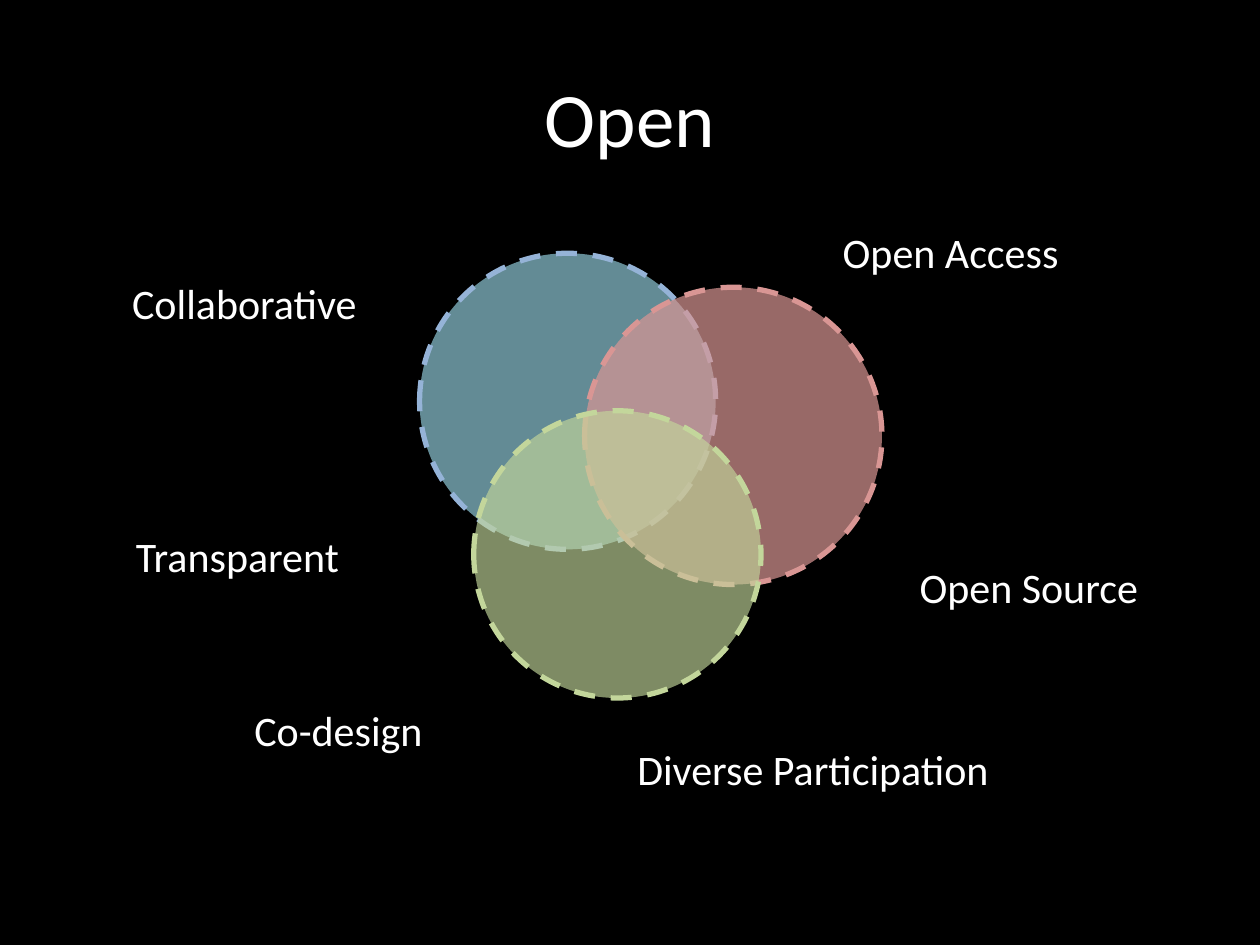
"""Build the "Open" slide: three overlapping circles ringed by six labels."""
from lxml import etree
from pptx import Presentation
from pptx.dml.color import RGBColor
from pptx.enum import dml, shapes, text
from pptx.oxml import ns
from pptx.util import Inches, Pt


def rgb(code):
    return RGBColor.from_string(code)


def write(paragraph, words, size):
    run = paragraph.add_run()
    run.text = words
    run.font.name = "Calibri"
    run.font.size = Pt(size)
    run.font.color.rgb = rgb("FFFFFF")


deck = Presentation()
deck.slide_width, deck.slide_height = Inches(10), Inches(7.5)
slide = deck.slides.add_slide(deck.slide_layouts[5])
slide.background.fill.solid()
slide.background.fill.fore_color.rgb = rgb("000000")

title = slide.shapes.title
title.left, title.top = Inches(0.5), Inches(0.3)
title.width, title.height = Inches(9), Inches(1.25)
title.text_frame.vertical_anchor = text.MSO_ANCHOR.MIDDLE
heading = title.text_frame.paragraphs[0]
heading.alignment = text.PP_ALIGN.CENTER
write(heading, "Open", 44)

circles = [
    (3.33, 2.01, 2.35, "93CDDD", "95B3D7", 68),
    (4.64, 2.28, 2.36, "D99694", "D99694", 70),
    (3.76, 3.26, 2.28, "C3D69B", "C3D69B", 65),
]
for left, top, diameter, inside, edge, opacity in circles:
    circle = slide.shapes.add_shape(
        shapes.MSO_SHAPE.OVAL,
        Inches(left), Inches(top), Inches(diameter), Inches(diameter),
    )
    circle.shadow.inherit = False
    circle.fill.solid()
    circle.fill.fore_color.rgb = rgb(inside)
    tint = circle.fill._xPr.find(ns.qn("a:solidFill"))[0]
    etree.SubElement(tint, ns.qn("a:alpha"), val=str(opacity * 1000))
    circle.line.color.rgb = rgb(edge)
    circle.line.width = Pt(3)
    circle.line.dash_style = dml.MSO_LINE.DASH

labels = [
    ("Collaborative", 0.95, 2.15, 2.01),
    ("Open Access", 6.59, 1.75, 1.93),
    ("Transparent", 0.98, 4.16, 1.87),
    ("Open Source", 7.2, 4.41, 1.96),
    ("Diverse Participation", 4.96, 5.85, 3.04),
    ("Co-design", 1.92, 5.54, 1.55),
]
for words, left, top, width in labels:
    label = slide.shapes.add_textbox(
        Inches(left), Inches(top), Inches(width), Inches(0.5)
    )
    label.text_frame.word_wrap = False
    label.text_frame.auto_size = text.MSO_AUTO_SIZE.SHAPE_TO_FIT_TEXT
    write(label.text_frame.paragraphs[0], words, 24)

deck.save("out.pptx")
